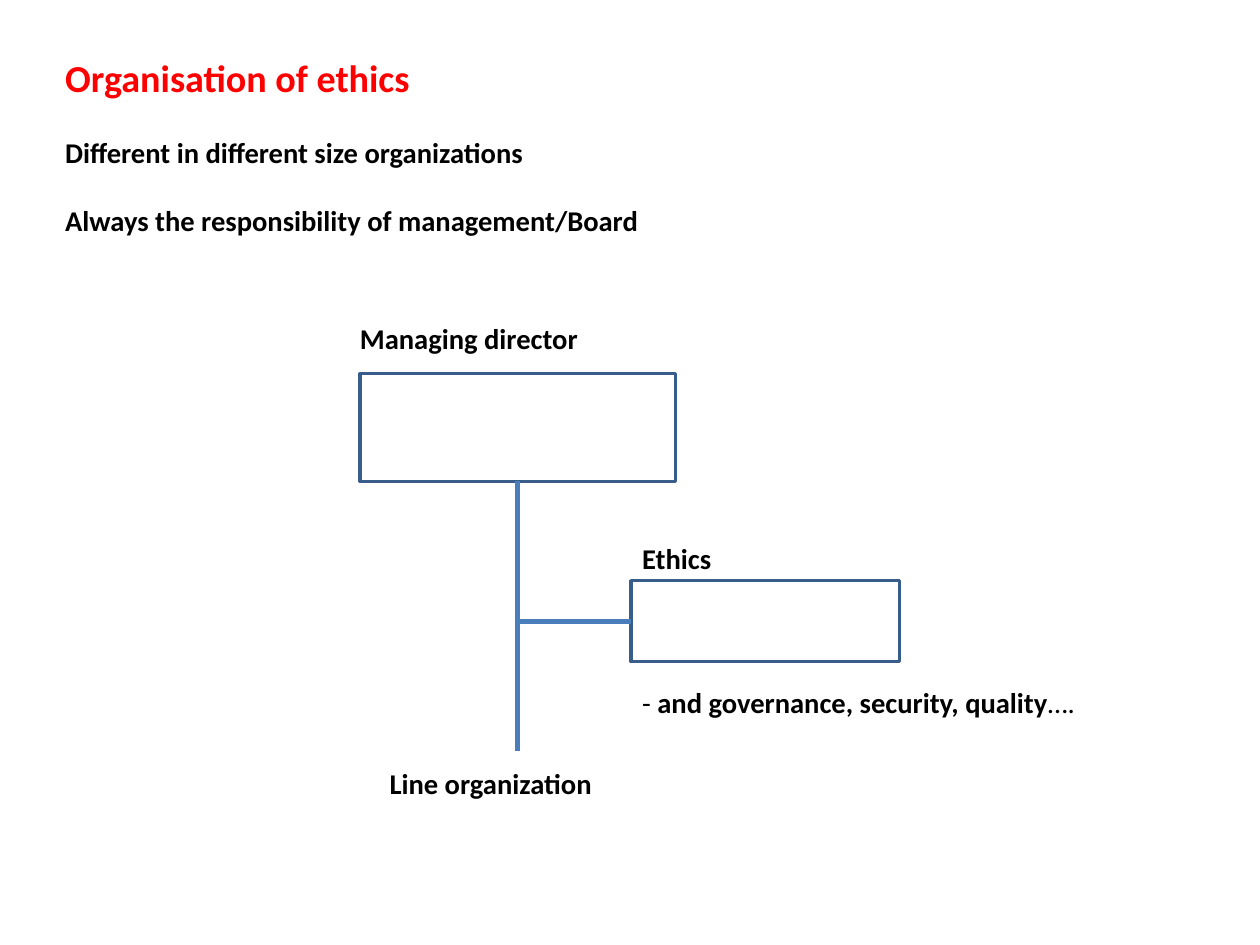
from dataclasses import dataclass

from lxml import etree
from pptx import Presentation
from pptx.dml.color import RGBColor
from pptx.enum import shapes, text
from pptx.oxml import ns
from pptx.util import Cm, Inches, Pt

FRAME_FORMAT = {
    "word_wrap": True,
    "auto_size": text.MSO_AUTO_SIZE.NONE,
    "vertical_anchor": text.MSO_ANCHOR.TOP,
    "margin_left": Inches(0.1),
    "margin_right": Inches(0.1),
    "margin_top": Inches(0.05),
    "margin_bottom": Inches(0.05),
}
PARA_FORMAT = {
    "alignment": text.PP_ALIGN.LEFT,
    "space_before": Pt(0),
    "line_spacing": 1.0,
}


@dataclass
class Area:
    left: float
    top: float
    width: float
    height: float

    def lengths(self) -> list:
        return [Inches(n) for n in (self.left, self.top, self.width, self.height)]


@dataclass
class Span:
    words: str
    bold: bool = True


@dataclass
class Label:
    area: Area
    spans: list[Span]


def apply(target, values: dict) -> None:
    for name, value in values.items():
        setattr(target, name, value)


def paint(color_format, hex_color: str) -> None:
    color_format.rgb = RGBColor.from_string(hex_color)


def write(box, paras: list[list[Span]], size: float = 18,
          color: str = "000000", gap: float = 0) -> None:
    frame = box.text_frame
    apply(frame, FRAME_FORMAT)
    for index, spans in enumerate(paras):
        para = frame.paragraphs[0] if index == 0 else frame.add_paragraph()
        apply(para, PARA_FORMAT | {"space_after": Pt(gap)})
        for span in spans:
            run = para.add_run()
            run.text = span.words
            apply(run.font, {"name": "Calibri", "size": Pt(size), "bold": span.bold})
            paint(run.font.color, color)


def place(shape, area: Area) -> None:
    apply(shape, dict(zip(("left", "top", "width", "height"), area.lengths())))


def remove_bullets(box) -> None:
    for para in box.text_frame.paragraphs:
        properties = para._p.get_or_add_pPr()
        properties.set("marL", "0")
        properties.set("indent", "0")
        etree.SubElement(properties, ns.qn("a:buNone"))


def add_unit(page, area: Area):
    unit = page.shapes.add_shape(shapes.MSO_SHAPE.RECTANGLE, *area.lengths())
    unit.shadow.inherit = False
    unit.fill.solid()
    paint(unit.fill.fore_color, "FFFFFF")
    paint(unit.line.color, "385D8A")
    unit.line.width = Pt(2)
    return unit


def add_link(page, start: tuple[float, float], end: tuple[float, float]):
    link = page.shapes.add_connector(
        shapes.MSO_CONNECTOR.STRAIGHT, *(Inches(n) for n in start + end))
    paint(link.line.color, "4A7EBB")
    link.line.width = Pt(3)
    etree.SubElement(link._element.spPr, ns.qn("a:effectLst"))
    return link


DIRECTOR = Area(3.15, 3.27, 2.76, 0.94)
ETHICS = Area(5.52, 5.08, 2.35, 0.71)
LABELS = [
    Label(Area(5.52, 4.68, 2.35, 0.4), [Span("Ethics")]),
    Label(Area(5.52, 5.94, 4.64, 0.4),
          [Span("- ", False), Span("and governance, security, quality"), Span("….", False)]),
    Label(Area(3.05, 2.76, 3.17, 0.4), [Span("Managing director")]),
    Label(Area(3.31, 6.65, 4.17, 0.4), [Span("Line organization")]),
]


def main() -> None:
    deck = Presentation()
    deck.slide_width = Cm(28)
    deck.slide_height = Cm(21)
    page = deck.slides.add_slide(deck.slide_layouts[1])

    title, body = page.shapes.title, page.placeholders[1]
    place(title, Area(0.47, 0.43, 10.24, 0.55))
    write(title, [[Span("Organisation of ethics")]], size=24, color="FF0000")
    place(body, Area(0.47, 1.13, 10.24, 1.4))
    write(body, [[Span("Different in different size organizations")],
                 [Span("Always the responsibility of management/Board")]], gap=21.5)
    remove_bullets(body)

    director = add_unit(page, DIRECTOR)
    ethics = add_unit(page, ETHICS)
    trunk_x = DIRECTOR.left + DIRECTOR.width / 2
    branch_y = ETHICS.top + ETHICS.height / 2
    trunk = add_link(page, (trunk_x, DIRECTOR.top + DIRECTOR.height), (trunk_x, 6.57))
    trunk.begin_connect(director, 2)
    branch = add_link(page, (trunk_x, branch_y), (ETHICS.left, branch_y))
    branch.end_connect(ethics, 1)

    for label in LABELS:
        write(page.shapes.add_textbox(*label.area.lengths()), [label.spans])

    deck.save("out.pptx")


if __name__ == "__main__":
    main()
